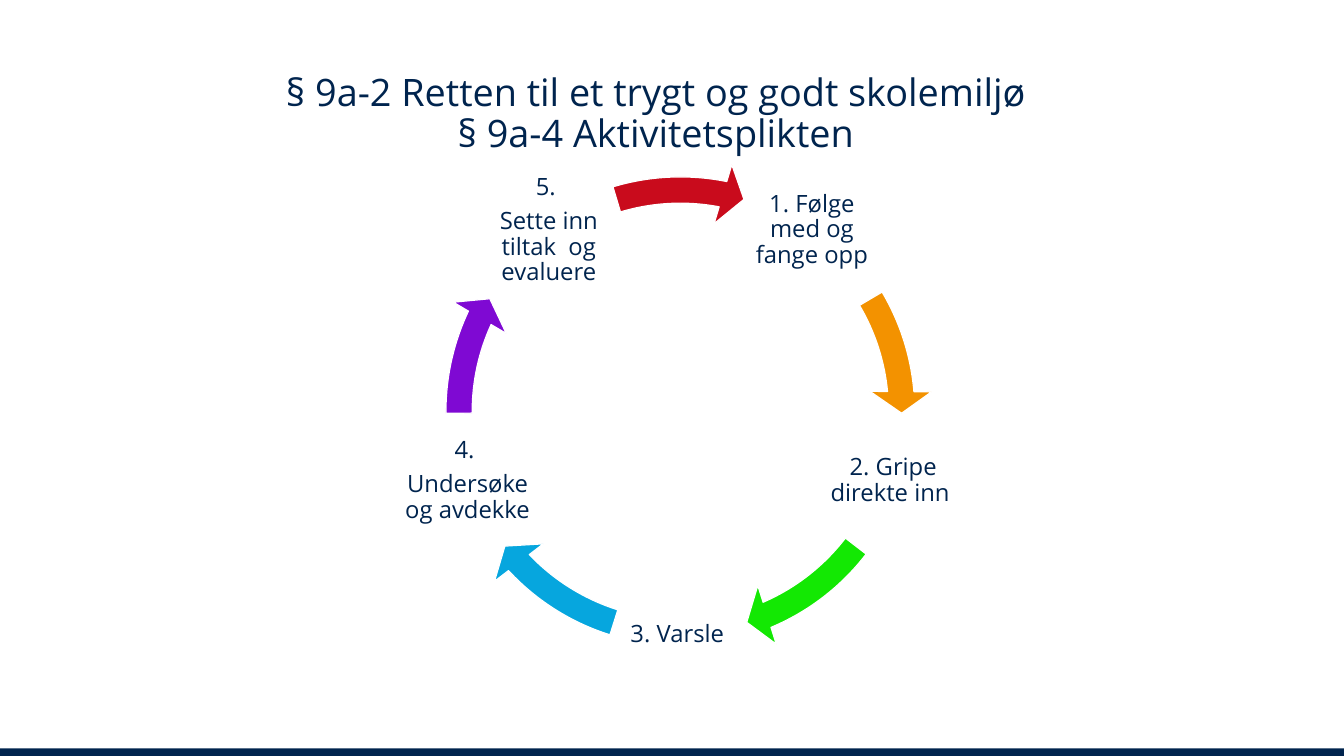
from math import cos, radians, sin

from pptx import Presentation
from pptx.dml.color import RGBColor
from pptx.enum.shapes import MSO_SHAPE
from pptx.enum.text import MSO_ANCHOR, PP_ALIGN
from pptx.util import Pt

RECT = MSO_SHAPE.RECTANGLE
ARROW = MSO_SHAPE.CIRCULAR_ARROW
MIDDLE = MSO_ANCHOR.MIDDLE
CENTER = PP_ALIGN.CENTER

WIDE, HIGH = 960, 540
NAVY, WHITE = "00244E", "FFFFFF"
FACE = "Open Sans"
TITLE = "§ 9a-2 Retten til et trygt og godt skolemiljø\v§ 9a-4 Aktivitetsplikten"

STEPS = [
    (["1. Følge med og fange opp"], "F39200", 329.42, 354.9),
    (["2. Gripe direkte inn "], "13E803", 37.54, 66.93),
    (["3. Varsle "], "06A6DE", 107.48, 136.86),
    (["4. ", "Undersøke og avdekke "], "7F09D3", 179.5, 204.98),
    (["5. ", "Sette inn tiltak  og evaluere"], "C90B1C", 253.29, 281.11),
]


def color(code):
    return RGBColor.from_string(code)


def apply(item, values):
    for name, value in values.items():
        setattr(item, name, value)


def place(shape, box):
    names = ("left", "top", "width", "height")
    apply(shape, dict(zip(names, map(Pt, box))))


def write(frame, lines, size, after, inset):
    margins = ("margin_left", "margin_top", "margin_right", "margin_bottom")
    apply(frame, {"word_wrap": True, "vertical_anchor": MIDDLE})
    apply(frame, dict.fromkeys(margins, Pt(inset)))
    for i, line in enumerate(lines):
        para = frame.paragraphs[0] if i == 0 else frame.add_paragraph()
        para.text = line
        apply(para, {"alignment": CENTER, "line_spacing": 0.9,
                     "space_before": Pt(0), "space_after": Pt(after)})
        apply(para.font, {"name": FACE, "size": Pt(size), "bold": False})
        para.font.color.rgb = color(NAVY)


def draw(slide, kind, box, fill):
    shape = slide.shapes.add_shape(kind, *map(Pt, box))
    shape.shadow.inherit = False
    shape.fill.solid()
    shape.fill.fore_color.rgb = color(fill)
    shape.line.fill.background()
    return shape


def head(slide, box):
    title = slide.shapes.title
    place(title, box)
    write(title.text_frame, [TITLE], 27, 0, 3.6)


def label(slide, box, lines):
    text = slide.shapes.add_textbox(*map(Pt, box))
    write(text.text_frame, lines, 17, 6, 1.5)


def arrow(slide, box, fill, start, end):
    shape = draw(slide, ARROW, box, fill)
    shape.line.color.rgb = color(WHITE)
    shape.line.width = Pt(0.85)
    values = (0.052, 5.595 * 0.6, end * 0.6, start * 0.6, 0.061)
    for i, value in enumerate(values):
        shape.adjustments[i] = value


def cycle(slide, box):
    left, top, width, height = box
    mid_x, mid_y = left + width / 2, top + height / 2
    radius, side = width * 0.444, 96
    for i, (lines, fill, start, end) in enumerate(STEPS):
        angle = radians(-54 + i * 360 / len(STEPS))
        x = mid_x + radius * cos(angle) - side / 2
        y = mid_y + radius * sin(angle) - side / 2
        label(slide, (x, y, side, side), lines)
        arrow(slide, box, fill, start, end)


def main():
    deck = Presentation()
    apply(deck, {"slide_width": Pt(WIDE), "slide_height": Pt(HIGH)})
    slide = deck.slides.add_slide(deck.slide_layouts[5])
    draw(slide, RECT, (0, HIGH - 5.4, WIDE, 5.4), NAVY)
    head(slide, (156, 50.4, 625, 63.4))
    cycle(slide, (306, 113.8, 360, 360))
    deck.save("out.pptx")


if __name__ == "__main__":
    main()
